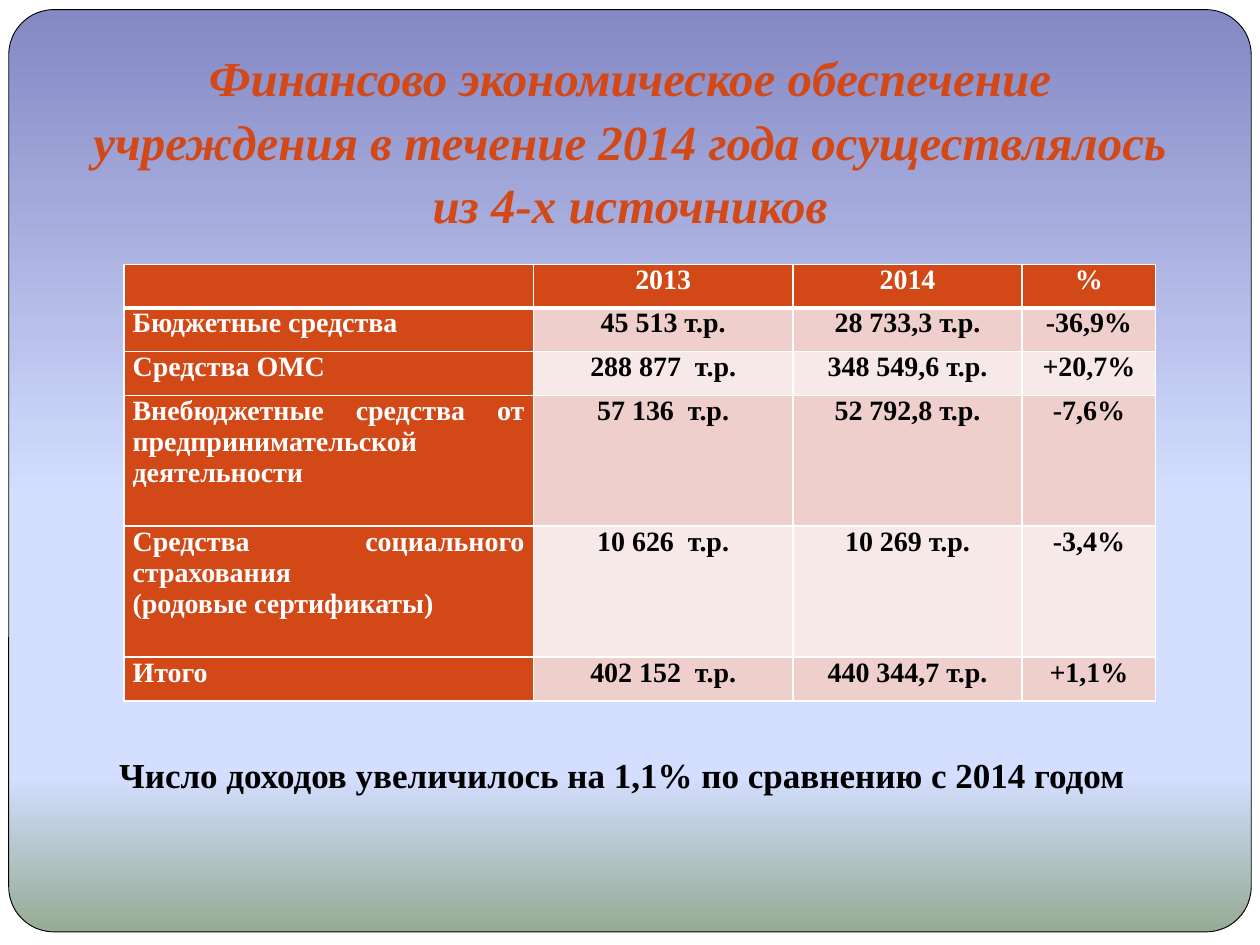
from pptx import Presentation
from pptx import util as u
from pptx.dml.color import RGBColor
from pptx.enum import shapes, text
from pptx.oxml.ns import qn
from lxml import etree

Pt = u.Pt
FONT = "Times New Roman"
COLORS = {"accent": "D34817", "white": "FFFFFF", "black": "000000",
          "odd": "EFCFCC", "even": "F7E9E8"}
PANEL_STOPS = [(0, "8488C4"), (53, "D4DEFF"), (83, "D4DEFF"), (100, "96AB94")]

TITLE = ("Финансово экономическое обеспечение учреждения "
         "в течение 2014 года осуществлялось из 4-х источников")
SUMMARY = "Число доходов увеличилось на 1,1% по сравнению с 2014 годом"
ROWS = [
    ("", "2013", "2014", "%"),
    ("Бюджетные средства", "45 513 т.р.", "28 733,3 т.р.", "-36,9%"),
    ("Средства ОМС", "288 877  т.р.", "348 549,6 т.р.", "+20,7%"),
    ("Внебюджетные средства от предпринимательской деятельности",
     "57 136  т.р.", "52 792,8 т.р.", "-7,6%"),
    ("Средства социального страхования\n(родовые сертификаты)",
     "10 626  т.р.", "10 269 т.р.", "-3,4%"),
    ("Итого", "402 152  т.р.", "440 344,7 т.р.", "+1,1%"),
]
COLUMN_WIDTHS = [234, 148.3, 131, 76.3]
ROW_HEIGHTS = [25, 25, 25, 74.8, 74.8, 25]


def rgb(name):
    return RGBColor.from_string(COLORS[name])


def write(frame, words, size, color, align, italic=False):
    frame.text = words
    frame.word_wrap = True
    for para in frame.paragraphs:
        para.alignment = align
        for span in para.runs:
            font = span.font
            font.name, font.size = FONT, Pt(size)
            font.bold, font.italic = True, italic
            font.color.rgb = rgb(color)


def add_panel(page):
    panel = page.shapes.add_shape(shapes.MSO_SHAPE.ROUNDED_RECTANGLE,
                                  Pt(5), Pt(5.5), Pt(710), Pt(527))
    panel.adjustments[0] = 0.049
    panel.shadow.inherit = False
    panel.line.color.rgb = rgb("black")
    panel.line.width = Pt(0.5)
    panel.fill.gradient()
    panel.fill.gradient_angle = 270
    stops = panel._element.spPr.find(".//" + qn("a:gsLst"))
    for stop in list(stops):
        stops.remove(stop)
    for percent, color in PANEL_STOPS:
        stop = etree.SubElement(stops, qn("a:gs"), pos=str(percent * 1000))
        etree.SubElement(stop, qn("a:srgbClr"), val=color)


def add_text(page, left, top, width, height, *style, **options):
    box = page.shapes.add_textbox(Pt(left), Pt(top), Pt(width), Pt(height))
    write(box.text_frame, *style, **options)
    return box


def set_borders(cell, widths):
    """Draw white cell borders; widths maps a side letter to points."""
    props = cell._tc.get_or_add_tcPr()
    for index, (side, width) in enumerate(widths.items()):
        line = etree.Element(qn("a:ln" + side), w=str(Pt(width)))
        fill = etree.SubElement(line, qn("a:solidFill"))
        etree.SubElement(fill, qn("a:srgbClr"), val=COLORS["white"])
        props.insert(index, line)


def add_funding_table(page):
    table = page.shapes.add_table(
        len(ROWS), len(COLUMN_WIDTHS), Pt(70.8), Pt(151),
        Pt(sum(COLUMN_WIDTHS)), Pt(sum(ROW_HEIGHTS))).table
    for column, width in zip(table.columns, COLUMN_WIDTHS):
        column.width = Pt(width)
    for row, height in zip(table.rows, ROW_HEIGHTS):
        row.height = Pt(height)
    for r, values in enumerate(ROWS):
        for c, value in enumerate(values):
            cell = table.cell(r, c)
            heading = r == 0 or c == 0
            cell.margin_left = cell.margin_right = Pt(5)
            cell.margin_top = cell.margin_bottom = 0
            cell.fill.solid()
            cell.fill.fore_color.rgb = rgb(
                "accent" if heading else "odd" if r % 2 else "even")
            align = text.PP_ALIGN.JUSTIFY if c == 0 else text.PP_ALIGN.CENTER
            write(cell.text_frame, value, 16,
                  "white" if heading else "black", align)
            set_borders(cell, {"L": 1, "R": 1, "T": 3 if r == 1 else 1,
                               "B": 3 if r == 0 else 1})


def main():
    deck = Presentation()
    deck.slide_width, deck.slide_height = Pt(720), Pt(540)
    page = deck.slides.add_slide(deck.slide_layouts[6])
    add_panel(page)
    title = add_text(page, 36, 21, 648, 110, TITLE, 28, "accent",
                     text.PP_ALIGN.CENTER, italic=True)
    title.text_frame.paragraphs[0].line_spacing = 1.08
    add_funding_table(page)
    add_text(page, 61, 427, 610, 32, SUMMARY, 20, "black", text.PP_ALIGN.LEFT)
    deck.save("out.pptx")


if __name__ == "__main__":
    main()
